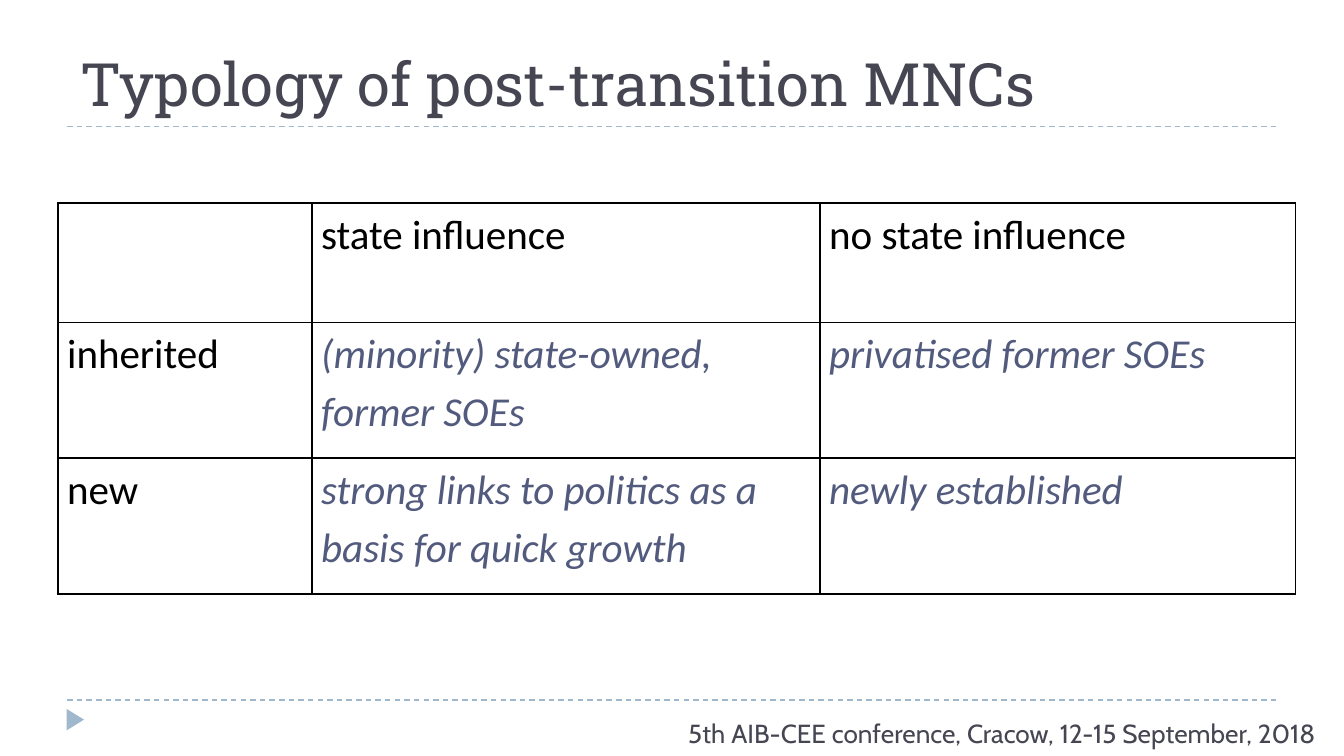
from lxml import etree
from pptx import Presentation
from pptx.dml.color import RGBColor
from pptx.enum.dml import MSO_LINE
from pptx.enum.shapes import MSO_CONNECTOR, MSO_SHAPE
from pptx.enum.text import MSO_ANCHOR, MSO_AUTO_SIZE, PP_ALIGN
from pptx.oxml.ns import qn
from pptx.util import Inches, Pt

STRAIGHT = MSO_CONNECTOR.STRAIGHT
TRIANGLE = MSO_SHAPE.ISOSCELES_TRIANGLE
DASH = MSO_LINE.DASH
BOTTOM = MSO_ANCHOR.BOTTOM
NO_FIT = MSO_AUTO_SIZE.NONE
LEFT, RIGHT = PP_ALIGN.LEFT, PP_ALIGN.RIGHT

BLACK = RGBColor(0x00, 0x00, 0x00)
SLATE = RGBColor(0x46, 0x46, 0x53)
INDIGO = RGBColor(0x52, 0x5B, 0x7E)
PALE_BLUE = RGBColor(0x9F, 0xB8, 0xCD)

SLIDE_WIDTH = Inches(10)
SLIDE_HEIGHT = SLIDE_WIDTH * 9 // 16
MARGIN, CONTENT_WIDTH = 0.5, 9
COLUMNS = [1.89, 3.78, 3.54]
ROWS = [0.89, 1.01, 1.01]
TYPOLOGY = [
    ["", "state influence", "no state influence"],
    ["inherited", "(minority) state-owned, former SOEs", "privatised former SOEs"],
    ["new", "strong links to politics as a basis for quick growth", "newly established"],
]


def style_text(p, name, size, color, align=LEFT):
    """Set the font and alignment of a paragraph."""
    p.font.name, p.font.size = name, Pt(size)
    p.font.color.rgb = color
    p.alignment = align


def add_rule(slide, y):
    """Draw a dashed rule across the content width."""
    line = slide.shapes.add_connector(
        STRAIGHT, Inches(MARGIN), Inches(y), Inches(MARGIN + CONTENT_WIDTH), Inches(y))
    line.line.color.rgb = PALE_BLUE
    line.line.width = Pt(0.75)
    line.line.dash_style = DASH
    etree.SubElement(line._element.spPr, qn("a:effectLst"))


def add_marker(slide):
    """Draw the small triangle that points right below the lower rule."""
    sp = slide.shapes.add_shape(
        TRIANGLE, Inches(0.48), Inches(5.29), Inches(0.16), Inches(0.13))
    sp.rotation = 90
    sp.shadow.inherit = False
    sp.fill.solid()
    sp.fill.fore_color.rgb = PALE_BLUE
    sp.line.fill.background()


def set_title(slide, text):
    """Place and fill the title placeholder."""
    title = slide.shapes.title
    title.left, title.top = Inches(MARGIN), Inches(0.12)
    title.width, title.height = Inches(CONTENT_WIDTH), Inches(0.81)
    tf = title.text_frame
    tf.text = text
    tf.auto_size = NO_FIT
    tf.vertical_anchor = BOTTOM
    style_text(tf.paragraphs[0], "Roboto Slab", 32, SLATE)


def add_footer(slide, text):
    """Add the conference line at the lower right."""
    box = slide.shapes.add_textbox(Inches(2.09), Inches(5.29), Inches(7.8), Inches(0.22))
    tf = box.text_frame
    tf.word_wrap = True
    tf.text = text
    style_text(tf.paragraphs[0], "Cabin", 14, SLATE, RIGHT)


def set_borders(cell):
    """Give a cell thin black borders on all sides."""
    tcPr = cell._tc.get_or_add_tcPr()
    for i, side in enumerate(("lnL", "lnR", "lnT", "lnB")):
        ln = etree.Element(qn(f"a:{side}"), w=str(Pt(1)))
        fill = etree.SubElement(ln, qn("a:solidFill"))
        etree.SubElement(fill, qn("a:srgbClr"), val=str(BLACK))
        tcPr.insert(i, ln)


def fill_cell(cell, text, is_type):
    """Write a table cell, with types in italics."""
    cell.margin_left = cell.margin_right = Inches(0.07)
    cell.margin_top = cell.margin_bottom = 0
    cell.fill.background()
    set_borders(cell)
    cell.text = text
    p = cell.text_frame.paragraphs[0]
    style_text(p, "Calibri", 22, INDIGO if is_type else BLACK)
    p.font.italic = is_type
    p.line_spacing = 1.15
    p.space_after = Pt(10)


def add_typology(slide):
    """Add the table of company types."""
    table = slide.shapes.add_table(
        len(ROWS), len(COLUMNS), Inches(0.43), Inches(1.51),
        Inches(sum(COLUMNS)), Inches(sum(ROWS))).table
    table.first_row = table.horz_banding = False
    for column, width in zip(table.columns, COLUMNS):
        column.width = Inches(width)
    for row, height in zip(table.rows, ROWS):
        row.height = Inches(height)
    for r, texts in enumerate(TYPOLOGY):
        for c, text in enumerate(texts):
            fill_cell(table.cell(r, c), text, r > 0 and c > 0)


def main():
    """Build and save the slide."""
    prs = Presentation()
    prs.slide_width, prs.slide_height = SLIDE_WIDTH, SLIDE_HEIGHT
    slide = prs.slides.add_slide(prs.slide_layouts[5])
    for y in (5.21, 0.94):
        add_rule(slide, y)
    add_marker(slide)
    set_title(slide, "Typology of post-transition MNCs")
    add_footer(slide, "5th AIB-CEE conference, Cracow, 12-15 September, 2018")
    add_typology(slide)
    prs.save("out.pptx")


if __name__ == "__main__":
    main()
